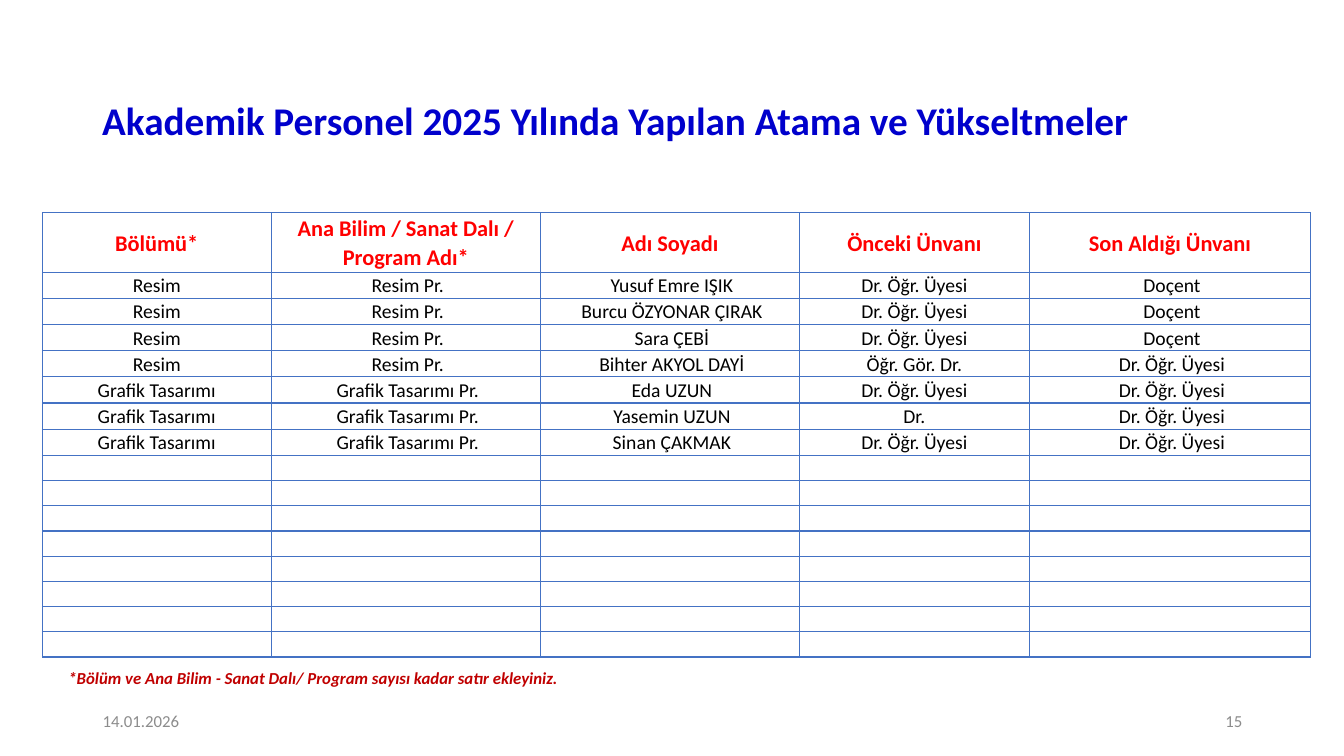
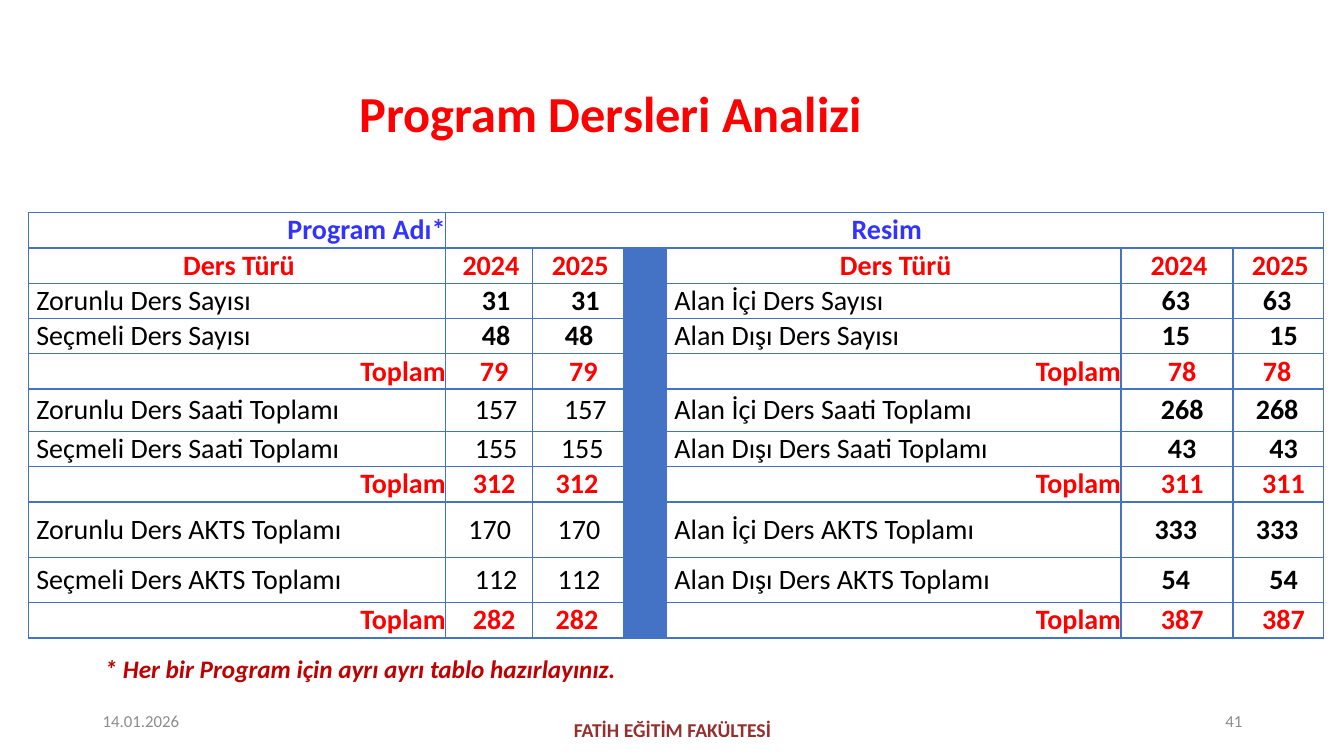
from dataclasses import dataclass, replace
from typing import Optional

from lxml import etree
from pptx import Presentation
from pptx.dml.color import RGBColor
from pptx.enum.text import MSO_ANCHOR, MSO_AUTO_SIZE, PP_ALIGN
from pptx.oxml.ns import qn
from pptx.util import Inches, Pt

LEFT, CENTER, RIGHT = PP_ALIGN.LEFT, PP_ALIGN.CENTER, PP_ALIGN.RIGHT
TOP, MIDDLE = MSO_ANCHOR.TOP, MSO_ANCHOR.MIDDLE
NO_AUTOFIT = MSO_AUTO_SIZE.NONE
FONT = "Calibri"
TITLE_ONLY_LAYOUT = 5
DATE = "14.01.2026"
COLORS = {
    "navy": "0000CC",
    "red": "FF0000",
    "blue": "3333FF",
    "black": "000000",
    "grey": "8C8C8C",
    "note": "C00000",
    "faculty": "962E2E",
    "accent": "4472C4",
}


@dataclass(frozen=True)
class TextStyle:
    size: float
    color: str = "black"
    bold: bool = False
    italic: bool = False
    alignment: PP_ALIGN = LEFT
    anchor: MSO_ANCHOR = MIDDLE
    indent: float = 0
    line_spacing: Optional[float] = None


@dataclass(frozen=True)
class Box:
    left: float
    top: float
    width: float
    height: float


@dataclass(frozen=True)
class Appointment:
    department: str
    program: str
    name: str
    former_title: str
    new_title: str


@dataclass(frozen=True)
class CourseRow:
    left: tuple[str, str, str]
    right: tuple[str, str, str]
    height: float = 0.35
    left_bold: bool = False
    total: bool = False


FOOTER = TextStyle(12, "grey")
FACULTY = TextStyle(14, "faculty", bold=True, alignment=CENTER)
NOTE = TextStyle(12, "note", bold=True, italic=True, anchor=TOP)
TITLE = TextStyle(28, "navy", bold=True, alignment=CENTER, line_spacing=0.9)
STAFF = TextStyle(14, alignment=CENTER, line_spacing=1.07)
STAFF_HEADER = replace(STAFF, size=16, color="red", bold=True)
COURSE_LABEL = TextStyle(20, indent=0.08)
COURSE_NUMBER = replace(COURSE_LABEL, alignment=CENTER)
COURSE_HEADER = TextStyle(20, "red", bold=True, alignment=CENTER, indent=0.04)
COURSE_TOTAL = replace(COURSE_HEADER, alignment=RIGHT)

STAFF_COLUMNS = [2.27, 2.67, 2.57, 2.28, 2.79]
STAFF_HEADINGS = ["Bölümü*", "Ana Bilim / Sanat Dalı / Program Adı*", "Adı Soyadı",
                  "Önceki Ünvanı", "Son Aldığı Ünvanı"]
STAFF_INDENTS = [0, 0.04, 0.04, 0, 0.04]
EMPTY_ROWS = 8
PAINTING = ("Resim", "Resim Pr.")
GRAPHICS = ("Grafik Tasarımı", "Grafik Tasarımı Pr.")
LECTURER = "Dr. Öğr. Üyesi"
APPOINTMENTS = [
    Appointment(*PAINTING, "Yusuf Emre IŞIK", LECTURER, "Doçent"),
    Appointment(*PAINTING, "Burcu ÖZYONAR ÇIRAK", LECTURER, "Doçent"),
    Appointment(*PAINTING, "Sara ÇEBİ", LECTURER, "Doçent"),
    Appointment(*PAINTING, "Bihter AKYOL DAYİ", "Öğr. Gör. Dr.", LECTURER),
    Appointment(*GRAPHICS, "Eda UZUN", LECTURER, LECTURER),
    Appointment(*GRAPHICS, "Yasemin UZUN", "Dr.", LECTURER),
    Appointment(*GRAPHICS, "Sinan ÇAKMAK", LECTURER, LECTURER),
]

COURSE_COLUMNS = [4.14, 0.86, 0.91, 0.42, 4.51, 1.11, 0.9]
DIVIDER_COLUMN = 3
COURSE_HEADINGS = ("Ders Türü", "2024", "2025")
COURSE_ROWS = [
    CourseRow(("Zorunlu Ders Sayısı", " 31", " 31"),
              ("Alan İçi Ders Sayısı", "63 ", "63 "), left_bold=True),
    CourseRow(("Seçmeli Ders Sayısı", " 48", "48 "),
              ("Alan Dışı Ders Sayısı", "15 ", " 15"), left_bold=True),
    CourseRow(("Toplam", " 79", " 79"), ("Toplam", " 78", "78 "), total=True),
    CourseRow(("Zorunlu Ders Saati Toplamı", " 157", " 157"),
              ("Alan İçi Ders Saati Toplamı", " 268", "268 "), 0.42),
    CourseRow(("Seçmeli Ders Saati Toplamı", " 155", "155"),
              ("Alan Dışı Ders Saati Toplamı", " 43", " 43")),
    CourseRow(("Toplam", " 312", "312 "), ("Toplam", " 311", " 311"), total=True),
    CourseRow(("Zorunlu Ders AKTS Toplamı", "170 ", "170 "),
              ("Alan İçi Ders AKTS Toplamı", "333 ", "333 "), 0.55),
    CourseRow(("Seçmeli Ders AKTS Toplamı", " 112", "112 "),
              ("Alan Dışı Ders AKTS Toplamı", "54 ", " 54"), 0.45),
    CourseRow(("Toplam", " 282", "282 "), ("Toplam", " 387", " 387"), total=True),
]


def write_text(text_frame, text: str, style: TextStyle) -> None:
    paragraph = text_frame.paragraphs[0]
    paragraph.text = text
    paragraph.alignment = style.alignment
    if style.line_spacing:
        paragraph.line_spacing = style.line_spacing
    if style.indent:
        properties = paragraph._p.get_or_add_pPr()
        properties.set("marL", str(Inches(style.indent)))
        properties.set("indent", "0")
    font = paragraph.font
    font.name = FONT
    font.size = Pt(style.size)
    font.bold = style.bold
    font.italic = style.italic
    font.color.rgb = RGBColor.from_string(COLORS[style.color])


def place_text(shape, box: Box, text: str, style: TextStyle) -> None:
    shape.left, shape.top = Inches(box.left), Inches(box.top)
    shape.width, shape.height = Inches(box.width), Inches(box.height)
    frame = shape.text_frame
    frame.word_wrap = True
    frame.auto_size = NO_AUTOFIT
    frame.vertical_anchor = style.anchor
    write_text(frame, text, style)


def add_text(slide, box: Box, text: str, style: TextStyle) -> None:
    place_text(slide.shapes.add_textbox(0, 0, 0, 0), box, text, style)


def add_base_slide(presentation, title: str, box: Box, style: TextStyle, number: int):
    slide = presentation.slides.add_slide(presentation.slide_layouts[TITLE_ONLY_LAYOUT])
    place_text(slide.shapes.title, box, title, style)
    add_text(slide, Box(0.92, 6.95, 3, 0.4), DATE, FOOTER)
    add_text(slide, Box(9.42, 6.95, 3, 0.4), str(number), replace(FOOTER, alignment=RIGHT))
    return slide


def format_cell(cell) -> None:
    cell.margin_left = cell.margin_right = cell.margin_top = cell.margin_bottom = 0
    cell.vertical_anchor = MIDDLE
    properties = cell._tc.get_or_add_tcPr()
    for side in ("a:lnL", "a:lnR", "a:lnT", "a:lnB"):
        line = etree.SubElement(properties, qn(side), w=str(Pt(1)))
        fill = etree.SubElement(line, qn("a:solidFill"))
        etree.SubElement(fill, qn("a:srgbClr"), val=COLORS["accent"])
    cell.fill.background()
    end_properties = cell.text_frame.paragraphs[0]._p.get_or_add_endParaRPr()
    end_properties.set("sz", "1400")


def add_grid(slide, left: float, columns: list[float], rows: list[float]):
    frame = slide.shapes.add_table(len(rows), len(columns), Inches(left), Inches(2.11),
                                   Inches(sum(columns)), Inches(sum(rows)))
    table = frame.table
    table.first_row = table.horz_banding = False
    for column, width in zip(table.columns, columns):
        column.width = Inches(width)
    for row, height in zip(table.rows, rows):
        row.height = Inches(height)
    for cell in table.iter_cells():
        format_cell(cell)
    return table


def add_appointments_slide(presentation) -> None:
    slide = add_base_slide(presentation,
                           "Akademik Personel 2025 Yılında Yapılan Atama ve Yükseltmeler",
                           Box(0.36, 0.87, 11.48, 0.69), TITLE, 15)
    heights = [0.59] + [0.26] * len(APPOINTMENTS) + [0.25] * EMPTY_ROWS
    table = add_grid(slide, 0.42, STAFF_COLUMNS, heights)
    for column, heading in enumerate(STAFF_HEADINGS):
        write_text(table.cell(0, column).text_frame, heading, STAFF_HEADER)
    for row, person in enumerate(APPOINTMENTS, start=1):
        values = (person.department, person.program, person.name,
                  person.former_title, person.new_title)
        for column, (value, indent) in enumerate(zip(values, STAFF_INDENTS)):
            write_text(table.cell(row, column).text_frame, value,
                       replace(STAFF, indent=indent))
    add_text(slide, Box(0.58, 6.58, 8.48, 0.3),
             "*Bölüm ve Ana Bilim - Sanat Dalı/ Program sayısı kadar satır ekleyiniz.", NOTE)


def write_half(table, row: int, first_column: int, values: tuple[str, str, str],
               label_style: TextStyle, number_style: TextStyle) -> None:
    styles = (label_style, number_style, number_style)
    for offset, (value, style) in enumerate(zip(values, styles)):
        write_text(table.cell(row, first_column + offset).text_frame, value, style)


def add_courses_slide(presentation) -> None:
    slide = add_base_slide(presentation, "Program Dersleri Analizi",
                           Box(0.41, 0.82, 11.3, 0.67),
                           replace(TITLE, size=36, color="red"), 41)
    add_text(slide, Box(4.42, 7.04, 4.5, 0.4), "FATİH EĞİTİM FAKÜLTESİ", FACULTY)
    heights = [0.35, 0.35] + [course.height for course in COURSE_ROWS]
    table = add_grid(slide, 0.28, COURSE_COLUMNS, heights)
    right_column = DIVIDER_COLUMN + 1

    table.cell(0, 1).merge(table.cell(0, len(COURSE_COLUMNS) - 1))
    write_text(table.cell(0, 0).text_frame, "Program Adı*",
               replace(COURSE_TOTAL, color="blue"))
    write_text(table.cell(0, 1).text_frame, "Resim", replace(COURSE_HEADER, color="blue"))
    for first_column in (0, right_column):
        write_half(table, 1, first_column, COURSE_HEADINGS, COURSE_HEADER, COURSE_HEADER)

    for row, course in enumerate(COURSE_ROWS, start=2):
        if course.total:
            label, left_number, right_number = COURSE_TOTAL, COURSE_HEADER, COURSE_HEADER
        else:
            label = COURSE_LABEL
            left_number = replace(COURSE_NUMBER, bold=course.left_bold)
            right_number = replace(COURSE_NUMBER, bold=True, indent=0.04)
        write_half(table, row, 0, course.left, label, left_number)
        write_half(table, row, right_column, course.right, label, right_number)

    for row in range(1, len(heights)):
        fill = table.cell(row, DIVIDER_COLUMN).fill
        fill.solid()
        fill.fore_color.rgb = RGBColor.from_string(COLORS["accent"])
    add_text(slide, Box(0.94, 6.43, 7.66, 0.4),
             "* Her bir Program için ayrı ayrı tablo hazırlayınız.", replace(NOTE, size=18))


def main() -> None:
    presentation = Presentation()
    presentation.slide_width, presentation.slide_height = Inches(13.33), Inches(7.5)
    add_appointments_slide(presentation)
    add_courses_slide(presentation)
    presentation.save("out.pptx")


if __name__ == "__main__":
    main()
